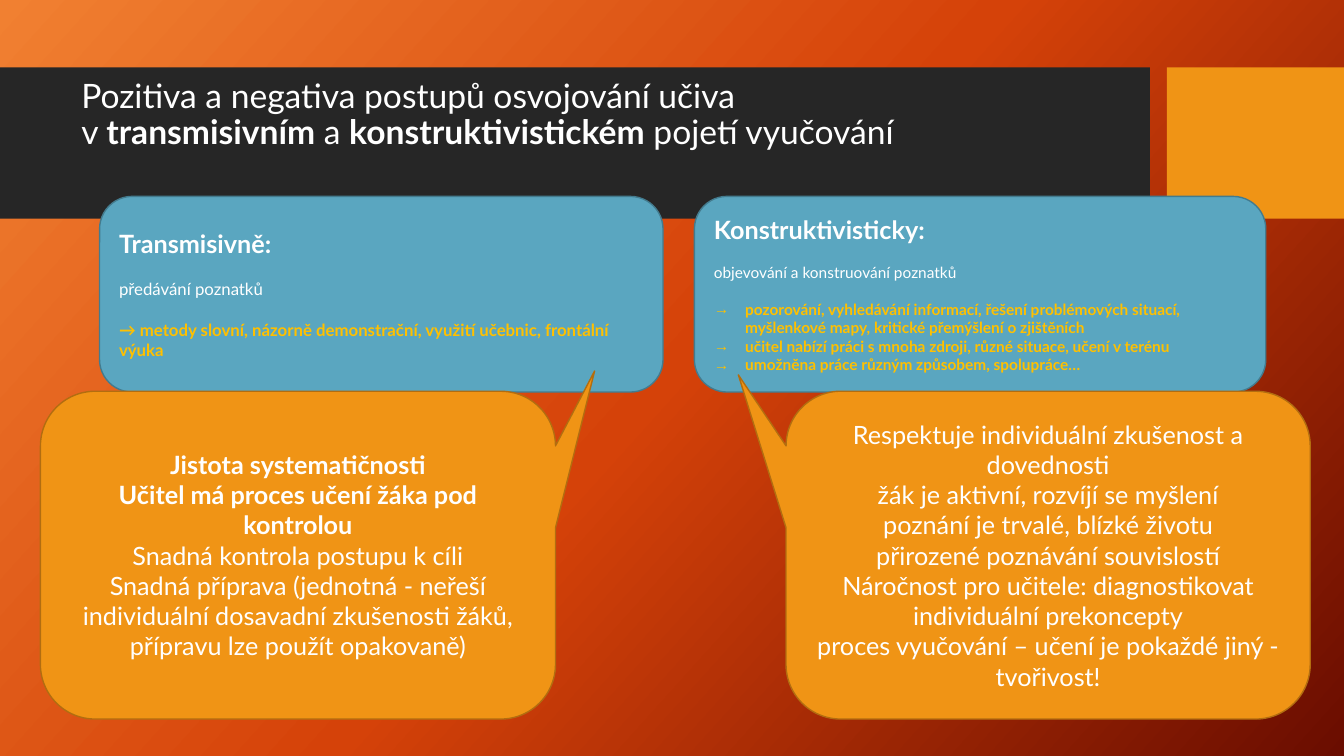
from copy import deepcopy
from lxml import etree
from pptx import Presentation
from pptx.dml.color import RGBColor as RGB
from pptx.enum.shapes import MSO_SHAPE as SHAPE
from pptx.enum.text import MSO_ANCHOR as ANCHOR, PP_ALIGN as ALIGN
from pptx.oxml.ns import qn
from pptx.util import Cm, Pt

FONT = "Lato"
WHITE = RGB(0xFF, 0xFF, 0xFF)
DARK = RGB(0x26, 0x26, 0x26)
ORANGE = RGB(0xF0, 0x94, 0x15)
BROWN = RGB(0xB2, 0x6D, 0x10)
BLUE = RGB(0x5A, 0xA6, 0xC0)
TEAL = RGB(0x43, 0x7B, 0x8E)
YELLOW = RGB(0xFF, 0xC0, 0x00)
GLOW = [(0, RGB(0xF1, 0x80, 0x31)), (0.5, RGB(0xD5, 0x42, 0x09)),
        (1, RGB(0x6A, 0x0D, 0x00))]


def add_box(kind, at, fill, edge=None):
    box = slide.shapes.add_shape(kind, *[Cm(n) for n in at])
    box.shadow.inherit = False
    box.fill.solid()
    box.fill.fore_color.rgb = fill
    if edge is None:
        box.line.fill.background()
    else:
        box.line.color.rgb = edge
        box.line.width = Pt(1)
    box.text_frame.word_wrap = True
    box.text_frame.vertical_anchor = ANCHOR.MIDDLE
    return box


def style(run, size, bold=False, color=WHITE):
    run.font.name = FONT
    run.font.size = Pt(size)
    run.font.bold = bold
    run.font.color.rgb = color


deck = Presentation()
deck.slide_width, deck.slide_height = Cm(33.87), Cm(19.05)
slide = deck.slides.add_slide(deck.slide_layouts[6])

# Background gradient
back = slide.background.fill
back.gradient()
back.gradient_angle = 318
stops = slide.background._cSld.find(".//" + qn("a:gsLst"))
stops.append(deepcopy(stops[-1]))
for stop, (place, color) in zip(back.gradient_stops, GLOW):
    stop.position = place
    stop.color.rgb = color

# Title band
add_box(SHAPE.RECTANGLE, (0, 1.7, 28.98, 3.81), DARK)
add_box(SHAPE.RECTANGLE, (29.41, 1.7, 4.46, 3.81), ORANGE)

# Title
title = slide.shapes.add_textbox(Cm(1.8), Cm(1.27), Cm(25.22), Cm(3.28))
frame = title.text_frame
frame.word_wrap = True
frame.vertical_anchor = ANCHOR.MIDDLE
para = frame.paragraphs[0]
para.line_spacing = 0.9
para.text = "Pozitiva a negativa postupů osvojování učiva\vv "
for text in ("transmisivním", " a ", "konstruktivistickém", " pojetí vyučování"):
    para.add_run().text = text
for run in para.runs:
    style(run, 24, run.text in ("transmisivním", "konstruktivistickém"))

# Cards: left, width, text size, heading, summary, methods, bulleted
cards = [
    (2.51, 14.2, 12, "Transmisivně:", "předávání poznatků",
     ["→ metody slovní, názorně demonstrační, využití učebnic, frontální výuka"],
     False),
    (17.5, 14.4, 11, "Konstruktivisticky:", "objevování a konstruování poznatků",
     ["pozorování, vyhledávání informací, řešení problémových situací, "
      "myšlenkové mapy, kritické přemýšlení o zjištěních",
      "učitel nabízí práci s mnoha zdroji, různé situace, učení v terénu",
      "umožněna práce různým způsobem, spolupráce…"], True),
]
for left, width, size, head, brief, methods, listed in cards:
    card = add_box(SHAPE.ROUNDED_RECTANGLE, (left, 4.95, width, 4.93), BLUE, TEAL)
    card.text_frame.text = "\n".join([head, brief] + methods)
    for i, para in enumerate(card.text_frame.paragraphs):
        para.alignment = ALIGN.LEFT
        if i in (1, 2):
            para.space_before = Pt(size * 1.2)
        if listed and i > 1:
            props = para._p.get_or_add_pPr()
            props.set("marL", str(Cm(0.79)))
            props.set("indent", str(-Cm(0.79)))
            etree.SubElement(props, qn("a:buFont")).set("typeface", "Arial")
            etree.SubElement(props, qn("a:buChar")).set("char", "→")
        style(para.runs[0], 18 if i == 0 else size, i != 1,
              YELLOW if i > 1 else WHITE)

# Callouts: left, width, pointer, bold lines, lines
calls = [
    (1.02, 12.98, (0.576, -0.562), 2,
     ["Jistota systematičnosti",
      "Učitel má proces učení žáka pod kontrolou",
      "Snadná kontrola postupu k cíli",
      "Snadná příprava (jednotná - neřeší individuální dosavadní zkušenosti "
      "žáků, přípravu lze použít opakovaně)"]),
    (19.81, 13.21, (-0.591, -0.55), 0,
     ["Respektuje individuální zkušenost a dovednosti",
      "žák je aktivní, rozvíjí se myšlení",
      "poznání je trvalé, blízké životu",
      "přirozené poznávání souvislostí",
      "Náročnost pro učitele: diagnostikovat individuální prekoncepty",
      "proces vyučování – učení je pokaždé jiný - tvořivost!"]),
]
for left, width, tip, strong, lines in calls:
    call = add_box(SHAPE.ROUNDED_RECTANGULAR_CALLOUT,
                   (left, 9.86, width, 8.26), ORANGE, BROWN)
    call.adjustments[0], call.adjustments[1] = tip
    call.text_frame.text = "\n".join(lines)
    for i, para in enumerate(call.text_frame.paragraphs):
        para.alignment = ALIGN.CENTER
        style(para.runs[0], 18, i < strong)

deck.save("out.pptx")
